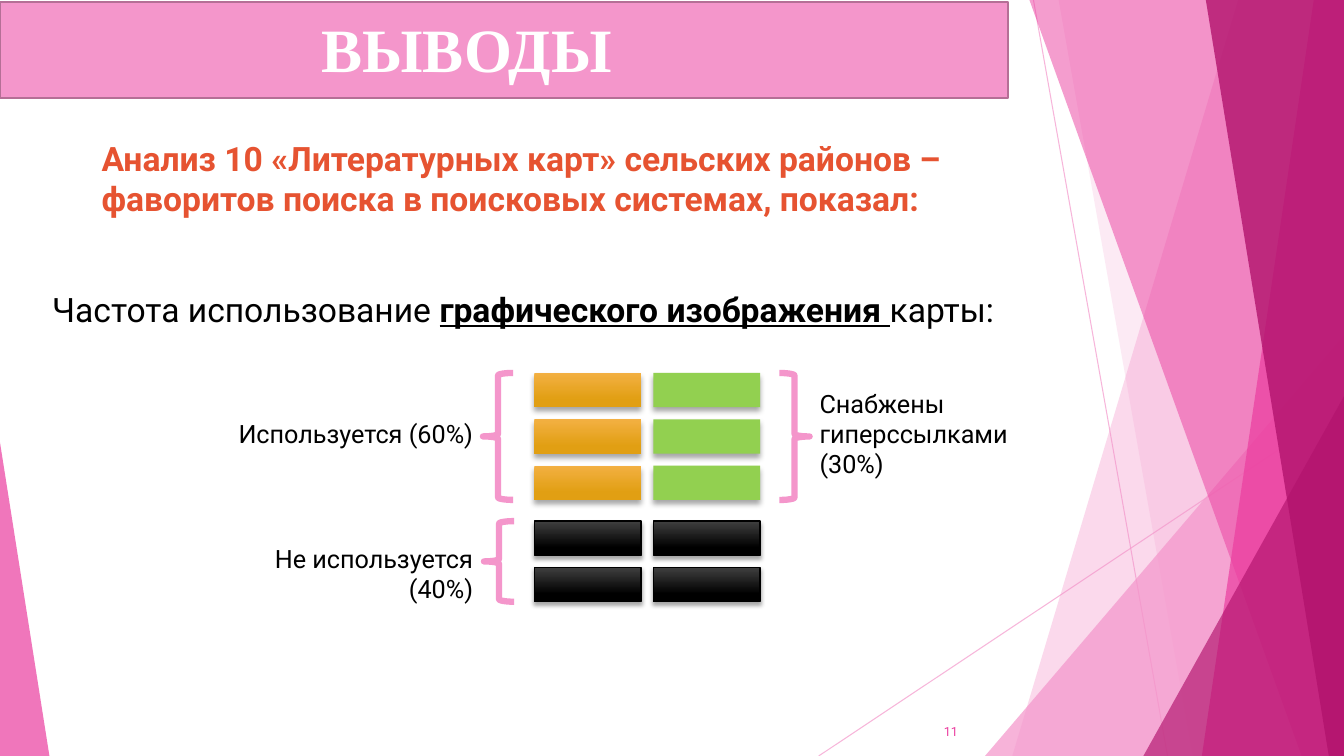
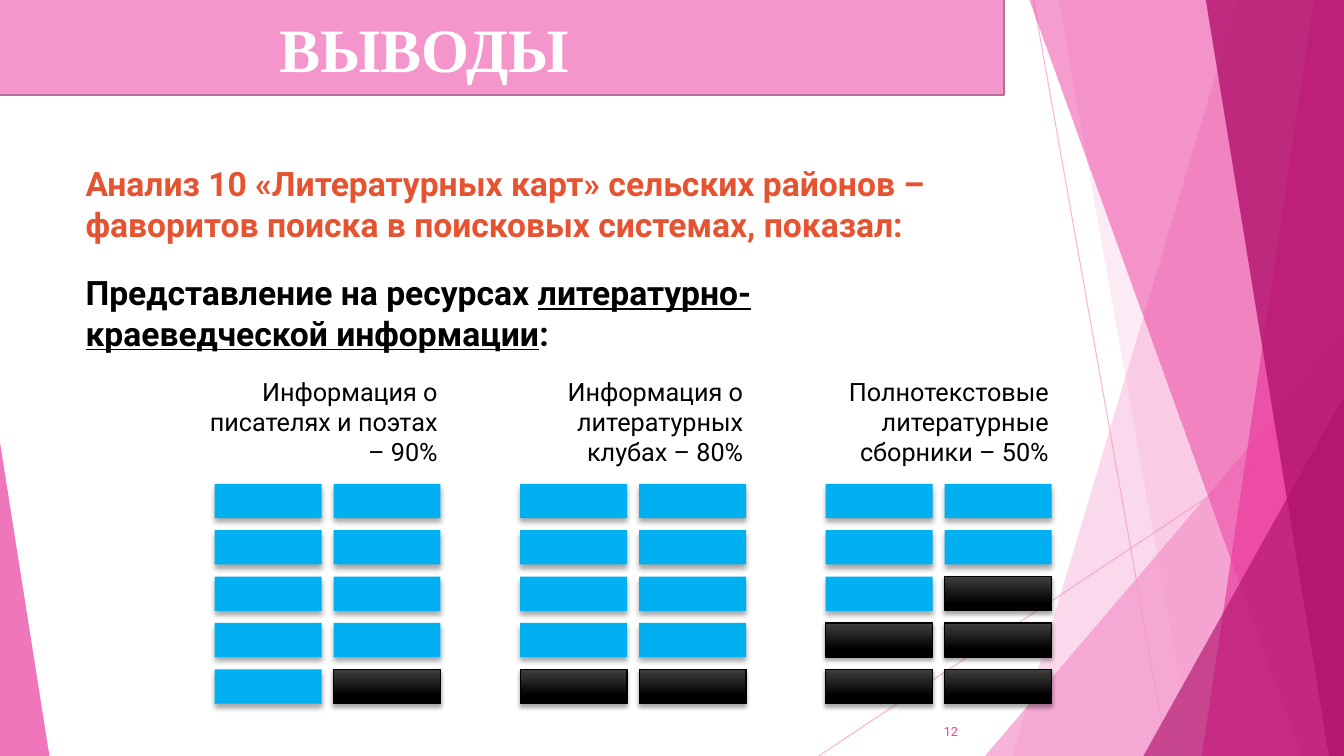
from lxml.etree import SubElement
from pptx import Presentation
from pptx.dml.color import RGBColor
from pptx.enum.shapes import MSO_CONNECTOR, MSO_SHAPE
from pptx.enum.text import MSO_ANCHOR as Anchor, MSO_AUTO_SIZE as AutoSize, PP_ALIGN as Align
from pptx.oxml.ns import qn
from pptx.util import Emu, Pt

SCALE = 9144
WIDTH, HEIGHT = 1333, 750

WHITE = RGBColor(0xFF, 0xFF, 0xFF)
BLACK = RGBColor(0x00, 0x00, 0x00)
CHARCOAL = RGBColor(0x3F, 0x3F, 0x3F)
LIGHT_PINK = RGBColor(0xF4, 0x96, 0xCB)
HOT_PINK = RGBColor(0xEB, 0x3D, 0x9F)
DARK_PINK = RGBColor(0xB2, 0x13, 0x6D)
BAND_EDGE = RGBColor(0xB5, 0x6F, 0x96)
HEADING_RED = RGBColor(0xE6, 0x53, 0x31)
LIGHT_AMBER = RGBColor(0xF3, 0xB0, 0x42)
AMBER = RGBColor(0xE1, 0x9F, 0x13)
GREEN = RGBColor(0x92, 0xD0, 0x50)
BLUE = RGBColor(0x00, 0xB0, 0xF0)

AMBER_BLOCK = (LIGHT_AMBER, AMBER)
GREEN_BLOCK = (GREEN,)
BLUE_BLOCK = (BLUE,)
BLACK_BLOCK = (CHARCOAL, BLACK)

BLOCK_WIDTH, BLOCK_HEIGHT = 106, 34
COLUMN_STEP, ROW_STEP = 118, 46
GROUP_STEP = 303


def px(*lengths):
    return [Emu(length * SCALE) for length in lengths]


def set_opacity(shape, percent):
    color = shape._element.spPr.find(".//" + qn("a:srgbClr"))
    SubElement(color, qn("a:alpha"), val=str(percent * 1000))


def add_text(slide, box, *paragraphs, size=18, font="Roboto", color=BLACK, bold=False,
             align=Align.LEFT, anchor=Anchor.TOP, autosize=AutoSize.SHAPE_TO_FIT_TEXT):
    frame = slide.shapes.add_textbox(*px(*box)).text_frame
    frame.word_wrap = True
    frame.auto_size = autosize
    frame.vertical_anchor = anchor
    for index, runs in enumerate(paragraphs):
        paragraph = frame.add_paragraph() if index else frame.paragraphs[0]
        paragraph.alignment = align
        if isinstance(runs, str):
            runs = [(runs, {})]
        for text, changes in runs:
            run = paragraph.add_run()
            run.text = text
            run.font.size = Pt(size)
            run.font.name = font
            run.font.color.rgb = color
            run.font.bold = changes.get("bold", bold)
            run.font.underline = changes.get("underline", False)


def add_ray(slide, *ends):
    ray = slide.shapes.add_connector(MSO_CONNECTOR.STRAIGHT, *px(*ends))
    ray.line.color.rgb = LIGHT_PINK
    ray.line.width = Pt(0.75)
    set_opacity(ray, 70)
    SubElement(ray._element.spPr, qn("a:effectLst"))


def paint_facet(shape, color, opacity):
    shape.shadow.inherit = False
    shape.fill.solid()
    shape.fill.fore_color.rgb = color
    shape.line.fill.background()
    set_opacity(shape, opacity)


def add_facet(slide, top_x, bottom_x, color, opacity):
    builder = slide.shapes.build_freeform(top_x, 0, scale=SCALE)
    builder.add_line_segments([(WIDTH, 0), (WIDTH, HEIGHT), (bottom_x, HEIGHT)], close=True)
    paint_facet(builder.convert_to_shape(), color, opacity)


def add_triangle(slide, left, top, right, apex, color, opacity):
    box = px(left, top, right - left, HEIGHT - top)
    triangle = slide.shapes.add_shape(MSO_SHAPE.ISOSCELES_TRIANGLE, *box)
    triangle.adjustments[0] = apex
    paint_facet(triangle, color, opacity)


def add_backdrop(slide):
    add_ray(slide, 1025, 0, 1158, HEIGHT)
    add_ray(slide, WIDTH, 403, 812, HEIGHT)
    add_facet(slide, 1228, 1004, LIGHT_PINK, 36)
    add_facet(slide, 1050, 1183, LIGHT_PINK, 20)
    add_triangle(slide, 977, 333, WIDTH, 1, LIGHT_PINK, 72)
    add_facet(slide, 1021, 1291, HOT_PINK, 50)
    add_facet(slide, 1303, 1192, HOT_PINK, 70)
    add_facet(slide, 1196, 1318, DARK_PINK, 80)
    add_triangle(slide, 1134, 393, WIDTH, 1, DARK_PINK, 66)
    add_triangle(slide, 0, 439, 49, 0, HOT_PINK, 70)


def add_title(slide, band_left, band_top, text_left):
    band = slide.shapes.add_shape(MSO_SHAPE.RECTANGLE, *px(band_left, band_top, 1000, 95))
    band.shadow.inherit = False
    band.fill.solid()
    band.fill.fore_color.rgb = LIGHT_PINK
    band.line.color.rgb = BAND_EDGE
    band.line.width = Pt(1.5)
    add_text(slide, (text_left, 6, 784, 84), "ВЫВОДЫ",
             size=44, font="Times New Roman", color=WHITE, bold=True)


def add_heading(slide, box, *paragraphs):
    add_text(slide, box, *paragraphs, size=24, color=HEADING_RED, bold=True)


def add_page_number(slide, number):
    add_text(slide, (885, 706, 75, 40), str(number), size=9, color=HOT_PINK,
             align=Align.RIGHT, anchor=Anchor.MIDDLE, autosize=AutoSize.NONE)


def add_shadow(shape, blur, distance):
    shape.shadow.inherit = False
    effects = shape._element.spPr.find(qn("a:effectLst"))
    shadow = SubElement(effects, qn("a:outerShdw"), blurRad=str(Pt(blur)), dist=str(Pt(distance)),
                        dir="5400000", rotWithShape="0")
    color = SubElement(shadow, qn("a:srgbClr"), val=str(BLACK))
    SubElement(color, qn("a:alpha"), val="35000")


def add_block(slide, left, top, colors):
    block = slide.shapes.add_shape(MSO_SHAPE.RECTANGLE, *px(left, top, BLOCK_WIDTH, BLOCK_HEIGHT))
    if len(colors) == 1:
        block.fill.solid()
        block.fill.fore_color.rgb = colors[0]
    else:
        block.fill.gradient()
        block.fill.gradient_angle = 270
        for stop, color, position in zip(block.fill.gradient_stops, colors, (0, 0.78)):
            stop.color.rgb = color
            stop.position = position
    if colors == BLACK_BLOCK:
        block.line.color.rgb = BLACK
        block.line.width = Pt(1)
        add_shadow(block, 3, 2)
    else:
        block.line.fill.background()
        add_shadow(block, 4, 3)


def add_block_grid(slide, left, top, blocks):
    for index, colors in enumerate(blocks):
        row, column = divmod(index, 2)
        add_block(slide, left + column * COLUMN_STEP, top + row * ROW_STEP, colors)


def add_brace(slide, left, top, height, rotation=0):
    brace = slide.shapes.add_shape(MSO_SHAPE.LEFT_BRACE, *px(left, top, 30, height))
    brace.shadow.inherit = False
    brace.fill.background()
    brace.line.color.rgb = LIGHT_PINK
    brace.line.width = Pt(4.5)
    brace.rotation = rotation


def start_slide(presentation, band_left, band_top, title_left):
    slide = presentation.slides.add_slide(presentation.slide_layouts[6])
    add_backdrop(slide)
    add_title(slide, band_left, band_top, title_left)
    return slide


def build_map_usage(presentation):
    slide = start_slide(presentation, 0, 2, 309)
    add_heading(slide, (91, 132, 984, 91),
                "Анализ 10 «Литературных карт» сельских районов –",
                "фаворитов поиска в поисковых системах, показал:")
    add_text(slide, (42, 282, 1066, 50),
             [("Частота использование ", {}),
              ("графического изображения ", {"bold": True, "underline": True}),
              ("карты:", {})], size=24)
    add_block_grid(slide, 530, 370, [AMBER_BLOCK, GREEN_BLOCK] * 3)
    add_block_grid(slide, 530, 517, [BLACK_BLOCK] * 4)
    add_brace(slide, 479, 370, 126)
    add_brace(slide, 480, 517, 80)
    add_brace(slide, 773, 370, 126, rotation=180)
    add_text(slide, (217, 410, 262, 40), "Используется (60%)", align=Align.RIGHT)
    add_text(slide, (197, 534, 282, 40), "Не используется (40%)", align=Align.RIGHT)
    add_text(slide, (803, 380, 226, 101), "Снабжены гиперссылками (30%)")
    add_page_number(slide, 11)


def build_local_information(presentation):
    slide = start_slide(presentation, -4, -1, 267)
    add_heading(slide, (75, 157, 978, 91),
                "Анализ 10 «Литературных карт» сельских районов – "
                "фаворитов поиска в поисковых системах, показал:")
    add_text(slide, (75, 265, 908, 91),
             [("Представление на ресурсах ", {}),
              ("литературно-краеведческой информации", {"underline": True}),
              (":", {})], size=24, bold=True)
    groups = [("Информация о писателях и поэтах – 90%", 9),
              ("Информация о литературных клубах – 80%", 8),
              ("Полнотекстовые литературные сборники – 50%", 5)]
    for index, (caption, count) in enumerate(groups):
        left = 213 + index * GROUP_STEP
        add_text(slide, (left - 20, 368, 251, 101), caption, align=Align.RIGHT)
        add_block_grid(slide, left, 480, [BLUE_BLOCK] * count + [BLACK_BLOCK] * (10 - count))
    add_page_number(slide, 12)


def main():
    presentation = Presentation()
    presentation.slide_width, presentation.slide_height = px(WIDTH, HEIGHT)
    build_map_usage(presentation)
    build_local_information(presentation)
    presentation.save("out.pptx")


if __name__ == "__main__":
    main()
